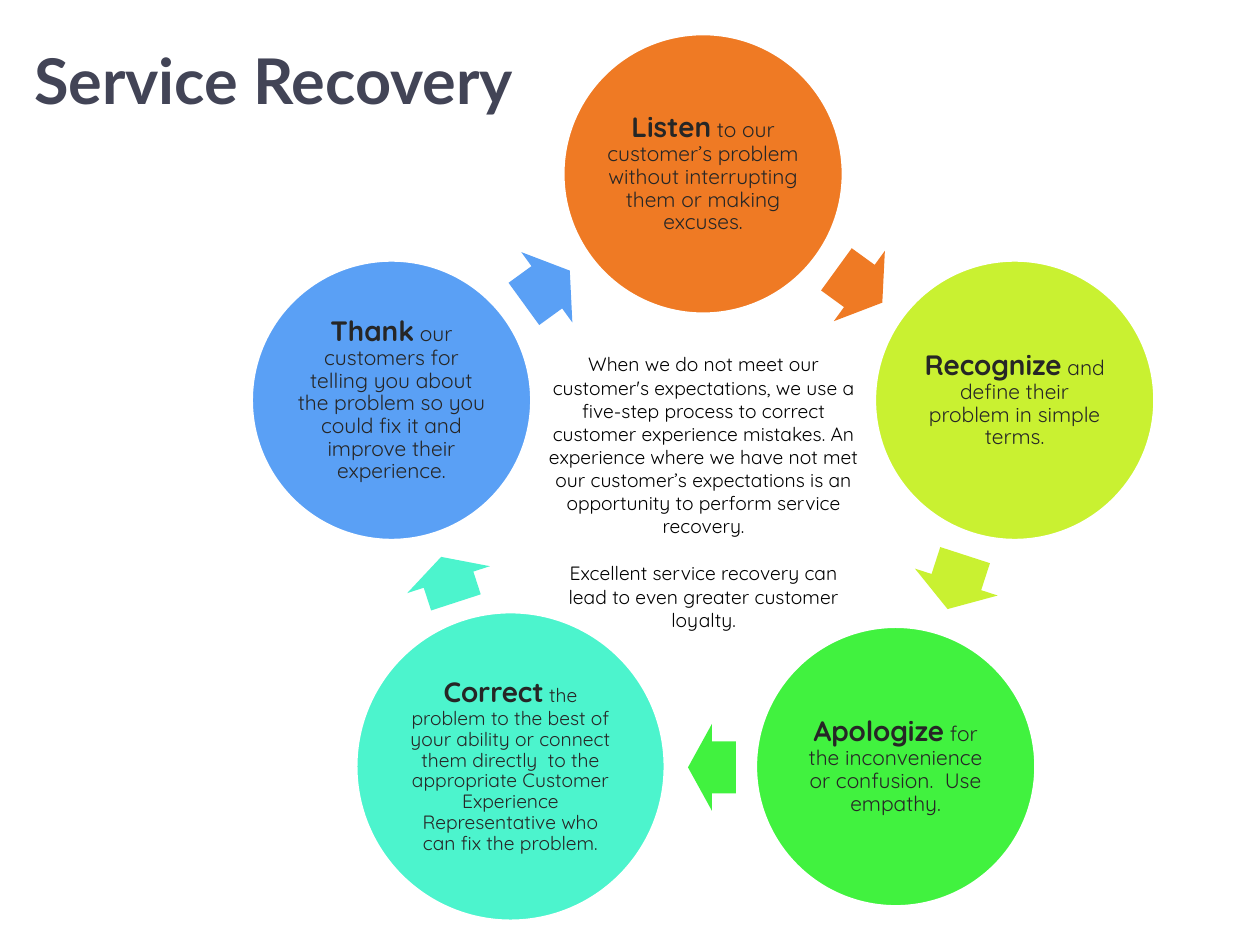
import math

import pptx
import pptx.dml.color
import pptx.enum.shapes
import pptx.enum.text
import pptx.util
from pptx.util import Inches

COLORS = {
    "orange": "EF7A24", "lime": "C9F131", "green": "41F23F",
    "aqua": "4CF4CD", "blue": "5AA0F5", "white": "FFFFFF",
    "black": "000000", "charcoal": "262626", "slate": "424456",
}
SHAPES = pptx.enum.shapes.MSO_SHAPE
ALIGN = pptx.enum.text.PP_ALIGN
ANCHOR = pptx.enum.text.MSO_ANCHOR


def set_font(font, name, size, color, bold=False):
    font.name = name
    font.size = pptx.util.Pt(size)
    font.bold = bold
    font.color.rgb = pptx.dml.color.RGBColor.from_string(COLORS[color])


def add_filled(kind, center_x, center_y, width, height, color):
    """Add a shadowless shape placed by its center."""
    shape = page.shapes.add_shape(
        kind, Inches(center_x - width / 2), Inches(center_y - height / 2),
        Inches(width), Inches(height))
    shape.shadow.inherit = False
    shape.fill.solid()
    shape.fill.fore_color.rgb = pptx.dml.color.RGBColor.from_string(COLORS[color])
    return shape


deck = pptx.Presentation()
deck.slide_width, deck.slide_height = Inches(10), Inches(7.5)
page = deck.slides.add_slide(deck.slide_layouts[5])

title = page.shapes.title
title.left, title.top = Inches(0.17), Inches(0.17)
title.width, title.height = Inches(9), Inches(0.92)
title.text_frame.text = "Service Recovery"
title.text_frame.auto_size = pptx.enum.text.MSO_AUTO_SIZE.NONE
title.text_frame.vertical_anchor = ANCHOR.MIDDLE
para = title.text_frame.paragraphs[0]
para.alignment = ALIGN.LEFT
set_font(para.font, "Lato", 36, "slate", bold=True)

# Keyword, rest of the text, text size, color, diameter, arrow center, arrow length
steps = [
    ("Listen", " to our customer’s problem without interrupting them or making excuses.",
     12, "orange", 2.22, (6.82, 2.27), 0.45),
    ("Recognize", " and define their problem in simple terms.",
     12, "lime", 2.22, (7.59, 4.62), 0.45),
    ("Apologize", " for the inconvenience or confusion.  Use empathy.",
     12, "green", 2.22, (5.65, 6.09), 0.38),
    ("Correct", " the problem to the best of your ability or connect them directly  to the "
     "appropriate Customer Experience Representative who can fix the problem.",
     11, "aqua", 2.45, (3.56, 4.6), 0.38),
    ("Thank", " our customers for telling you about the problem so you could fix it and "
     "improve their experience.",
     12, "blue", 2.22, (4.34, 2.28), 0.45),
]
RING_X, RING_Y, RING_RADIUS = 5.58, 3.98, 2.6
STEP_ANGLE = 360 / len(steps)

for index, (keyword, rest, size, color, diameter, arrow_center, length) in enumerate(steps):
    angle = math.radians(index * STEP_ANGLE)
    circle = add_filled(
        SHAPES.OVAL, RING_X + RING_RADIUS * math.sin(angle),
        RING_Y - RING_RADIUS * math.cos(angle), diameter, diameter, color)
    circle.line.color.rgb = pptx.dml.color.RGBColor.from_string(COLORS["white"])
    circle.line.width = pptx.util.Pt(1.5)

    frame = circle.text_frame
    frame.word_wrap = True
    frame.vertical_anchor = ANCHOR.MIDDLE
    frame.margin_left = frame.margin_right = Inches(0.02)
    frame.margin_top = frame.margin_bottom = Inches(0.02)
    para = frame.paragraphs[0]
    para.alignment = ALIGN.CENTER
    para.line_spacing = 0.9
    for text, text_size, bold in ((keyword, 16, True), (rest, size, False)):
        span = para.add_run()
        span.text = text
        set_font(span.font, "Quicksand", text_size, "charcoal", bold)

    arrow = add_filled(SHAPES.RIGHT_ARROW, *arrow_center, length, 0.69, color)
    arrow.adjustments[0] = 0.6
    arrow.adjustments[1] = 0.5
    arrow.rotation = (index + 0.5) * STEP_ANGLE
    arrow.line.fill.background()

summary = page.shapes.add_textbox(Inches(4.25), Inches(2.75), Inches(2.67), Inches(2.32))
frame = summary.text_frame
frame.word_wrap = True
frame.text = (
    "When we do not meet our customer's expectations, we use a five-step process to "
    "correct customer experience mistakes. An experience where we have not met our "
    "customer’s expectations is an opportunity to perform service recovery.\n"
    "Excellent service recovery can lead to even greater customer loyalty.")
for para in frame.paragraphs:
    para.alignment = ALIGN.CENTER
    set_font(para.font, "Quicksand", 11, "black")
frame.paragraphs[1].space_before = pptx.util.Pt(13.75)

deck.save("out.pptx")
